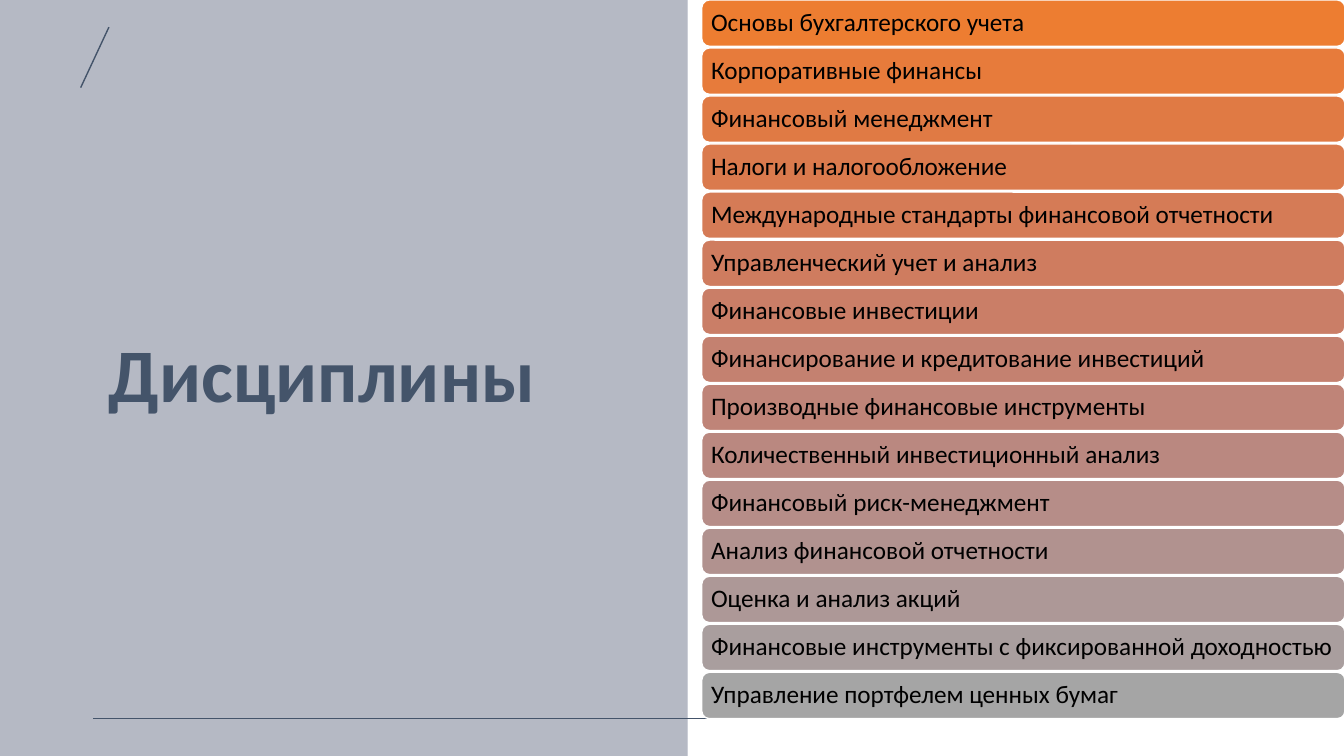
from colorsys import hls_to_rgb, rgb_to_hls

from lxml.etree import SubElement
from pptx import Presentation
from pptx.dml.color import RGBColor
from pptx.enum.shapes import MSO_CONNECTOR, MSO_SHAPE
from pptx.enum.text import MSO_ANCHOR, PP_ALIGN
from pptx.oxml.ns import qn
from pptx.util import Inches, Pt

COLORS = {
    "blue": "4472C4",
    "gray": "767171",
    "slate": "44546A",
    "orange": "ED7D31",
    "silver": "A5A5A5",
    "white": "FFFFFF",
    "black": "000000",
}
DISCIPLINES = [
    "Основы бухгалтерского учета",
    "Корпоративные финансы",
    "Финансовый менеджмент",
    "Налоги и налогообложение",
    "Международные стандарты финансовой отчетности",
    "Управленческий учет и анализ",
    "Финансовые инвестиции",
    "Финансирование и кредитование инвестиций",
    "Производные финансовые инструменты",
    "Количественный инвестиционный анализ",
    "Финансовый риск-менеджмент",
    "Анализ финансовой отчетности",
    "Оценка и анализ акций",
    "Финансовые инструменты с фиксированной доходностью",
    "Управление портфелем ценных бумаг",
]
PANEL_WIDTH = 6.82
LIST_LEFT, LIST_WIDTH = 6.96, 6.38
BAR_HEIGHT, LAST_BAR_TOP = 0.46, 6.67


def blend(start, end, share):
    """Return the hex colour between two hex colours, mixed by hue, lightness and saturation."""
    ends = [rgb_to_hls(*(channel / 255 for channel in RGBColor.from_string(color)))
            for color in (start, end)]
    mixed = [first + (last - first) * share for first, last in zip(*ends)]
    return str(RGBColor(*(round(channel * 255) for channel in hls_to_rgb(*mixed))))


class SlideBuilder:
    font_name = "Calibri"
    line_width = Pt(1)

    def __init__(self, slide):
        self.slide = slide

    def box(self, kind, left, top, width, height, fill, alpha=None, outline=None):
        shape = self.slide.shapes.add_shape(
            kind, Inches(left), Inches(top), Inches(width), Inches(height))
        shape.shadow.inherit = False
        shape.fill.solid()
        shape.fill.fore_color.rgb = RGBColor.from_string(fill)
        if alpha is not None:
            color = shape.fill._xPr.find(qn("a:solidFill"))[0]
            SubElement(color, qn("a:alpha"), val=str(alpha * 1000))
        if outline:
            shape.line.color.rgb = RGBColor.from_string(outline)
            shape.line.width = self.line_width
        else:
            shape.line.fill.background()
        return shape

    def text(self, shape, words, color, inset, margin, **font_values):
        """Write left-aligned, vertically centred text, with inset as the left margin."""
        frame = shape.text_frame
        frame_values = {
            "word_wrap": True,
            "vertical_anchor": MSO_ANCHOR.MIDDLE,
            "margin_left": Inches(inset),
            "margin_right": Inches(margin),
            "margin_top": Inches(margin),
            "margin_bottom": Inches(margin),
        }
        paragraph = frame.paragraphs[0]
        run = paragraph.add_run()
        run.text = words
        run.font.color.rgb = RGBColor.from_string(color)
        formats = [
            (frame, frame_values),
            (paragraph, {"alignment": PP_ALIGN.LEFT, "line_spacing": 0.9}),
            (run.font, {"name": self.font_name, **font_values}),
        ]
        for target, values in formats:
            for name, value in values.items():
                setattr(target, name, value)

    def line(self, start, end, color):
        connector = self.slide.shapes.add_connector(
            MSO_CONNECTOR.STRAIGHT, *(Inches(length) for length in (*start, *end)))
        connector.line.color.rgb = RGBColor.from_string(color)
        connector.line.width = self.line_width
        SubElement(connector._element.spPr, qn("a:effectLst"))


def main():
    presentation = Presentation()
    presentation.slide_width = Inches(13.33)
    presentation.slide_height = Inches(7.5)
    slide = presentation.slides.add_slide(presentation.slide_layouts[6])
    builder = SlideBuilder(slide)

    for color, alpha in (("blue", 20), ("gray", 36)):
        panel = builder.box(MSO_SHAPE.RECTANGLE, 0, 0, PANEL_WIDTH, 7.5, COLORS[color], alpha)
    builder.text(panel, "Дисциплины", COLORS["slate"], 1.08, 0.05, size=Pt(54), bold=True)

    builder.line((1.08, 0.27), (0.8, 0.87), COLORS["slate"])
    builder.line((12.64, 7.13), (0.92, 7.13), COLORS["slate"])

    last = len(DISCIPLINES) - 1
    for index, discipline in enumerate(DISCIPLINES):
        share = index / last
        bar = builder.box(
            MSO_SHAPE.ROUNDED_RECTANGLE, LIST_LEFT, LAST_BAR_TOP * share, LIST_WIDTH, BAR_HEIGHT,
            blend(COLORS["orange"], COLORS["silver"], share), outline=COLORS["white"])
        builder.text(bar, discipline, COLORS["black"], 0.07, 0.05, size=Pt(18))

    presentation.save("out.pptx")


if __name__ == "__main__":
    main()
